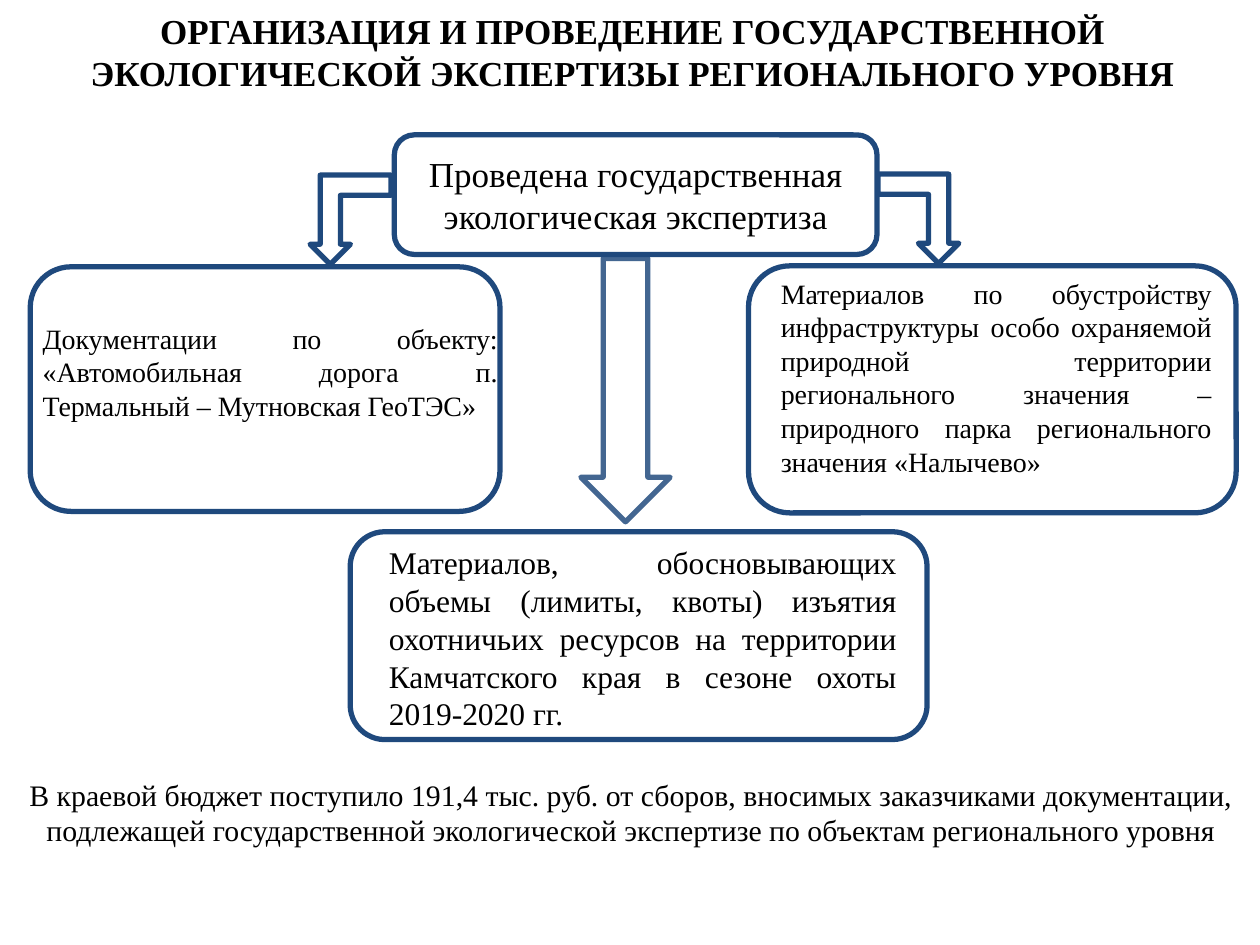
from dataclasses import dataclass

from lxml import etree
from pptx import Presentation, util as u
from pptx.dml.color import RGBColor
from pptx.enum import shapes, text
from pptx.oxml.ns import qn

BLUE, BLACK, WHITE = "1F497D", "000000", "FFFFFF"
ROUNDED = shapes.MSO_SHAPE.ROUNDED_RECTANGLE
BENT = shapes.MSO_SHAPE.BENT_UP_ARROW
DOWN = shapes.MSO_SHAPE.DOWN_ARROW
CENTER, JUSTIFY = text.PP_ALIGN.CENTER, text.PP_ALIGN.JUSTIFY
Box = tuple[float, float, float, float]


@dataclass
class Outline:
    kind: shapes.MSO_SHAPE
    box: Box
    rotation: int = 0
    flipped: bool = False
    opacity: int = 100


@dataclass
class Caption:
    box: Box
    wording: str
    size: int
    alignment: text.PP_ALIGN = JUSTIFY
    bold: bool = False
    margins: tuple[float, float] = (0.25, 0.13)


OUTLINES = [
    Outline(ROUNDED, (7.95, 2.72, 9.73, 2.41)),
    Outline(BENT, (6.25, 3.53, 1.63, 1.8), rotation=180),
    Outline(ROUNDED, (0.61, 5.38, 9.47, 4.93)),
    Outline(ROUNDED, (15.09, 5.36, 9.83, 4.98)),
    Outline(BENT, (17.7, 3.51, 1.63, 1.8), rotation=180, flipped=True),
    Outline(ROUNDED, (7.06, 10.72, 11.63, 4.19)),
    Outline(DOWN, (11.71, 5.21, 1.8, 5.31), opacity=84),
]

CAPTIONS = [
    Caption((0.05, 0.2, 25.4, 2.34),
            "ОРГАНИЗАЦИЯ И ПРОВЕДЕНИЕ ГОСУДАРСТВЕННОЙ "
            "ЭКОЛОГИЧЕСКОЙ ЭКСПЕРТИЗЫ РЕГИОНАЛЬНОГО УРОВНЯ",
            20, CENTER, bold=True, margins=(0.13, 0)),
    Caption((7.95, 2.95, 9.73, 1.96),
            "Проведена государственная экологическая экспертиза", 20, CENTER),
    Caption((0.61, 6.35, 9.68, 3.02),
            "Документации по объекту: «Автомобильная дорога "
            "п. Термальный – Мутновская ГеоТЭС»", 16),
    Caption((15.49, 5.44, 9.19, 4.37),
            "Материалов по обустройству инфраструктуры особо охраняемой "
            "природной территории регионального значения – природного парка "
            "регионального значения «Налычево»", 16),
    Caption((7.59, 10.82, 10.74, 4.11),
            "Материалов, обосновывающих объемы (лимиты, квоты) изъятия "
            "охотничьих ресурсов на территории Камчатского края "
            "в сезоне охоты 2019-2020 гг.", 18),
    Caption((0.3, 15.52, 24.84, 1.7),
            "В краевой бюджет поступило 191,4 тыс. руб. от сборов, вносимых "
            "заказчиками документации, подлежащей государственной экологической "
            "экспертизе по объектам регионального уровня", 17, CENTER),
]


def color(value: str) -> RGBColor:
    return RGBColor.from_string(value)


def apply_format(target, values: dict) -> None:
    for name, value in values.items():
        setattr(target, name, value)


def draw_outline(slide, outline: Outline) -> None:
    shape = slide.shapes.add_shape(outline.kind, *map(u.Cm, outline.box))
    shape.rotation = outline.rotation
    shape.shadow.inherit = False
    shape.fill.background()
    shape.line.width = u.Pt(3)
    shape.line.color.rgb = color(BLUE)
    properties = shape._element.spPr
    if outline.flipped:
        properties.find(qn("a:xfrm")).set("flipH", "1")
    if outline.opacity < 100:
        line_color = properties.find(qn("a:ln")).find(".//" + qn("a:srgbClr"))
        alpha = etree.SubElement(line_color, qn("a:alpha"))
        alpha.set("val", str(outline.opacity * 1000))


def draw_caption(slide, caption: Caption) -> None:
    frame = slide.shapes.add_textbox(*map(u.Cm, caption.box)).text_frame
    side, edge = map(u.Cm, caption.margins)
    apply_format(frame, {
        "word_wrap": True, "vertical_anchor": text.MSO_ANCHOR.TOP,
        "margin_left": side, "margin_right": side,
        "margin_top": edge, "margin_bottom": edge,
    })
    paragraph = frame.paragraphs[0]
    paragraph.alignment = caption.alignment
    run = paragraph.add_run()
    run.text = caption.wording
    apply_format(run.font, {
        "name": "Times New Roman", "size": u.Pt(caption.size), "bold": caption.bold,
    })
    run.font.color.rgb = color(BLACK)


def main() -> None:
    presentation = Presentation()
    apply_format(presentation, {"slide_width": u.Cm(25.4), "slide_height": u.Cm(19.05)})
    slide = presentation.slides.add_slide(presentation.slide_layouts[6])
    slide.background.fill.solid()
    slide.background.fill.fore_color.rgb = color(WHITE)
    for outline in OUTLINES:
        draw_outline(slide, outline)
    for caption in CAPTIONS:
        draw_caption(slide, caption)
    presentation.save("out.pptx")


if __name__ == "__main__":
    main()
